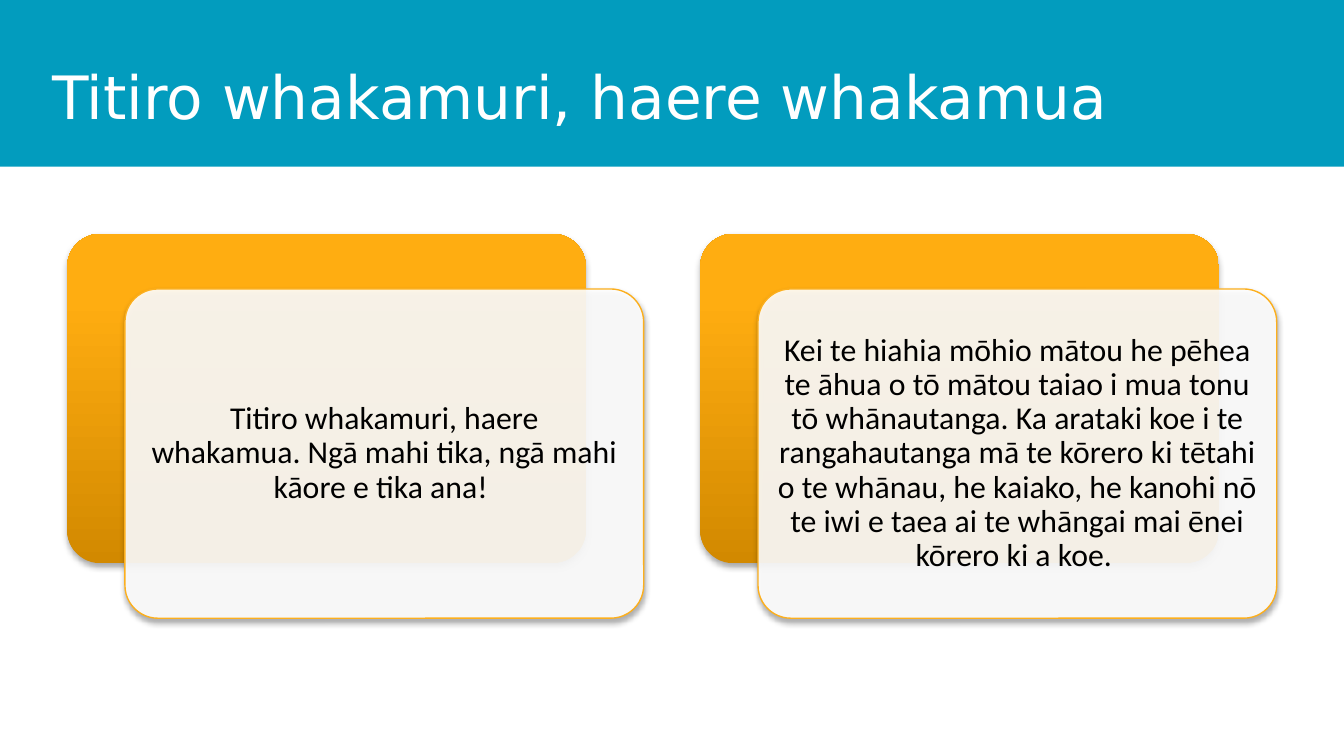
import pptx
import pptx.dml.color
import pptx.enum.shapes
import pptx.enum.text
import pptx.oxml
import pptx.util

Inches = pptx.util.Inches
Pt = pptx.util.Pt
KIND = pptx.enum.shapes.MSO_SHAPE
MIDDLE = pptx.enum.text.MSO_ANCHOR.MIDDLE
CENTER = pptx.enum.text.PP_ALIGN.CENTER
LEFT = pptx.enum.text.PP_ALIGN.LEFT
HARD = chr(160)  # no-break space
NS = 'xmlns:a="http://schemas.openxmlformats.org/drawingml/2006/main"'

GRAD = f"""<a:gradFill {NS} rotWithShape="1"><a:gsLst>
<a:gs pos="0"><a:srgbClr val="D28900"/></a:gs>
<a:gs pos="80000"><a:srgbClr val="FFAD11"/></a:gs>
<a:gs pos="100000"><a:srgbClr val="FFAD13"/></a:gs>
</a:gsLst><a:lin ang="16200000" scaled="0"/></a:gradFill>"""
SHADOW = f"""<a:effectLst {NS}>
<a:outerShdw blurRad="40000" dist="23000" dir="5400000" rotWithShape="0">
<a:srgbClr val="000000"><a:alpha val="35000"/></a:srgbClr>
</a:outerShdw></a:effectLst>"""
ALPHA = f'<a:alpha {NS} val="90000"/>'


def color(code):
    return pptx.dml.color.RGBColor.from_string(code)


def write(box, text, inset, para, font):
    """Fill a text box with one paragraph, formatted from two dicts."""
    frame = box.text_frame
    look = {"word_wrap": True, "vertical_anchor": MIDDLE}
    for side in ("left", "right", "top", "bottom"):
        look["margin_" + side] = Inches(inset)
    line = frame.paragraphs[0]
    line.text = text
    run = line.runs[0].font
    for part, values in ((frame, look), (line, para), (run, font)):
        for key, value in values.items():
            if key == "color":
                run.color.rgb = color(value)
            else:
                setattr(part, key, value)


deck = pptx.Presentation()
deck.slide_width = Inches(10)
deck.slide_height = deck.slide_width * 9 // 16
slide = deck.slides.add_slide(deck.slide_layouts[6])
shapes = slide.shapes

# Title band
band = shapes.add_shape(KIND.RECTANGLE, 0, 0, Inches(10), Inches(1.24))
band.shadow.inherit = False
band.fill.solid()
band.fill.fore_color.rgb = color("029CBE")
band.line.fill.background()

title = shapes.add_textbox(Inches(0.29), 0, Inches(9.2), Inches(1.16))
write(title, HARD.join(["Titiro", "whakamuri,", "haere", "whakamua"]), 0.1,
      {"alignment": LEFT, "line_spacing": 1.5},
      {"name": "DejaVu Sans", "size": Pt(32), "color": "FFFFFF"})

# Two cards, each over an orange panel; a hard space follows each sentence
notes = [
    ["Titiro whakamuri, haere whakamua.",
     "Ngā mahi tika, ngā mahi kāore e tika ana!"],
    ["Kei te hiahia mōhio mātou he pēhea te āhua o tō mātou taiao i mua tonu "
     "tō whānautanga.",
     "Ka arataki koe i te rangahautanga mā te kōrero ki tētahi o te whānau, "
     "he kaiako, he kanohi nō te iwi e taea ai te whāngai mai ēnei kōrero ki "
     "a koe."],
]
wide, high, step, pad = 3.86, 2.45, 4.71, 0.07
for col, note in enumerate(notes):
    left, top = 0.5 + col * step, 1.74
    panel, card = [
        shapes.add_shape(KIND.ROUNDED_RECTANGLE, Inches(left + dx),
                         Inches(top + dy), Inches(wide), Inches(high))
        for dx, dy in ((0, 0), (0.43, 0.41))
    ]

    panel.line.fill.background()
    panel.element.spPr.insert(2, pptx.oxml.parse_xml(GRAD))

    card.fill.solid()
    card.fill.fore_color.rgb = color("FFFFFF")
    tint = card.element.spPr.xpath("./a:solidFill/a:srgbClr")[0]
    tint.append(pptx.oxml.parse_xml(ALPHA))
    card.line.color.rgb = color("FCAF1D")
    card.line.width = Pt(0.75)

    for shape in (panel, card):
        shape.adjustments[0] = 0.1
        shape.element.spPr.append(pptx.oxml.parse_xml(SHADOW))

    label = shapes.add_textbox(
        card.left + Inches(pad), card.top + Inches(pad),
        card.width - Inches(2 * pad), card.height - Inches(2 * pad))
    write(label, "".join(part + HARD for part in note), pad,
          {"alignment": CENTER, "line_spacing": 0.9},
          {"name": "Calibri", "size": Pt(17), "color": "000000"})

deck.save("out.pptx")
